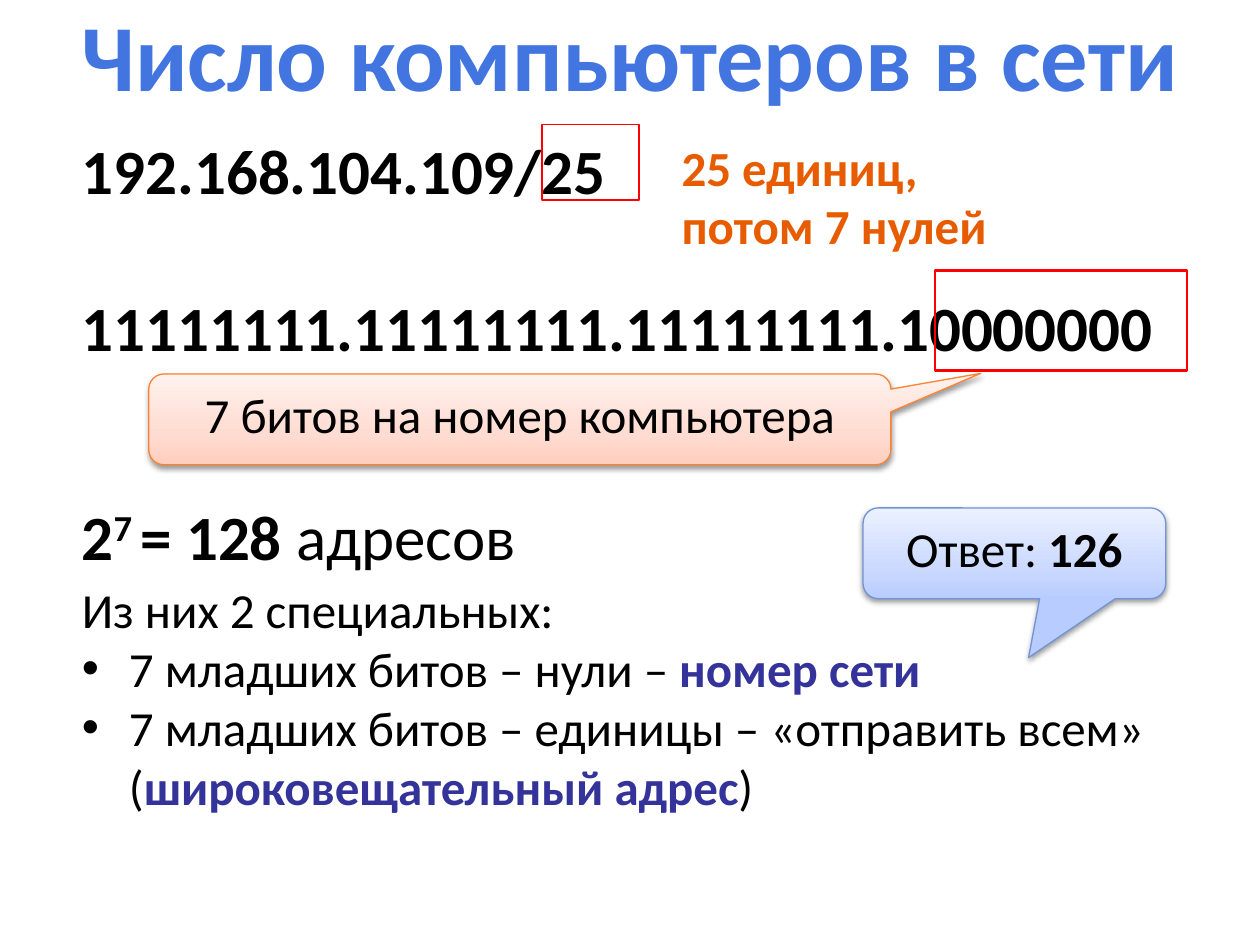
from lxml import etree
from pptx import Presentation
from pptx import util as u
from pptx.dml.color import RGBColor
from pptx.enum import shapes, text
from pptx.oxml import parse_xml
from pptx.oxml.ns import nsdecls, qn

AL = text.PP_ALIGN
ACCENT = "333399"


def rgb(value):
    return RGBColor.from_string(value)


def add_text(p, content, size=28, bold=False, color="000000", font="Calibri", base=0):
    """Add a formatted run for each line of content."""
    for i, line in enumerate(content.split("\n")):
        if i:
            p.add_line_break()
        r = p.add_run()
        r.text = line
        r.font.name, r.font.size, r.font.bold = font, u.Pt(size), bold
        r.font.color.rgb = rgb(color)
        if base:
            r.font._element.set("baseline", str(base * 1000))


class Builder:
    hang = u.Cm(0.95)
    red = "FF0000"

    def __init__(self, prs):
        self.s = prs.slides.add_slide(prs.slide_layouts[6])

    def box(self, x, y, w, h, wrap=True, grow=False, anchor=text.MSO_ANCHOR.TOP):
        tf = self.s.shapes.add_textbox(u.Cm(x), u.Cm(y), u.Cm(w), u.Cm(h)).text_frame
        tf.word_wrap = wrap
        tf.vertical_anchor = anchor
        if grow:
            tf.auto_size = text.MSO_AUTO_SIZE.SHAPE_TO_FIT_TEXT
        return tf

    def para(self, tf, runs, align=AL.LEFT, spacing=None, hang=False, bullet=None):
        """Fill the first empty paragraph or add one; runs are (text, format) pairs."""
        p = tf.paragraphs[0] if not tf.paragraphs[0].runs else tf.add_paragraph()
        p.alignment = align
        if spacing:
            p.line_spacing = spacing
        pPr = p._p.get_or_add_pPr()
        if hang:
            pPr.set("marL", str(self.hang))
            pPr.set("indent", str(-self.hang))
        if bullet:
            etree.SubElement(pPr, qn("a:buFont")).set("typeface", "Arial")
            etree.SubElement(pPr, qn("a:buChar")).set("char", bullet)
        for content, fmt in runs:
            add_text(p, content, **fmt)

    def line_box(self, x, y, w, h, runs, wrap=False):
        tf = self.box(x, y, w, h, wrap, grow=True)
        self.para(tf, runs, AL.JUSTIFY, spacing=1.15, hang=True)

    def frame(self, x, y, w, h, width):
        sp = self.s.shapes.add_shape(shapes.MSO_SHAPE.RECTANGLE,
                                     u.Cm(x), u.Cm(y), u.Cm(w), u.Cm(h))
        sp.shadow.inherit = False
        sp.fill.background()
        sp.line.color.rgb, sp.line.width = rgb(self.red), u.Pt(width)

    def callout(self, x, y, w, h, tip, stops, line, runs):
        sp = self.s.shapes.add_shape(shapes.MSO_SHAPE.ROUNDED_RECTANGULAR_CALLOUT,
                                     u.Cm(x), u.Cm(y), u.Cm(w), u.Cm(h))
        for i, value in enumerate((*tip, 0.167)):
            sp.adjustments[i] = value
        # Three-stop gradient, darkest at the bottom
        sp.fill.gradient()
        sp.fill.gradient_angle = 90
        gs_list = sp._element.spPr.find(".//" + qn("a:gsLst"))
        for gs in list(gs_list):
            gs_list.remove(gs)
        for pos, color in zip((0, 35, 100), stops):
            gs = etree.SubElement(gs_list, qn("a:gs"), pos=str(pos * 1000))
            etree.SubElement(gs, qn("a:srgbClr"), val=color)
        sp.line.color.rgb, sp.line.width = rgb(line), u.Pt(0.75)
        # Soft shadow below
        sp._element.spPr.append(parse_xml(
            f'<a:effectLst {nsdecls("a")}><a:outerShdw blurRad="{u.Pt(3.1)}" '
            f'dist="{u.Pt(1.6)}" dir="5400000" rotWithShape="0"><a:srgbClr val="000000">'
            '<a:alpha val="38000"/></a:srgbClr></a:outerShdw></a:effectLst>'))
        sp.text_frame.vertical_anchor = text.MSO_ANCHOR.TOP
        self.para(sp.text_frame, runs, AL.CENTER)


def main():
    prs = Presentation()
    prs.slide_width, prs.slide_height = u.Cm(25.4), u.Cm(19.05)
    b = Builder(prs)
    big = dict(size=36, bold=True)
    term = dict(bold=True, color=ACCENT)
    left = 1.4

    # Title
    tf = b.box(0, 0, 25.4, 2.16, anchor=text.MSO_ANCHOR.MIDDLE)
    b.para(tf, [("Число компьютеров в сети", dict(size=54, bold=True, color="4275DF"))],
           AL.CENTER)

    # Address and mask
    b.line_box(left, 2.29, 11.91, 2.03, [("192.168.104.109/25", big)])
    tf = b.box(13.49, 2.64, 7.34, 2.87)
    b.para(tf, [("25 единиц, \nпотом 7 нулей", dict(bold=True, color="E75C01"))])
    b.line_box(left, 5.46, 22.89, 2.03, [("11111111.11111111.11111111.10000000", big)])
    b.frame(18.85, 5.46, 5.08, 2.01, 1.5)
    b.callout(3, 7.54, 14.96, 1.83, (0.621, -0.507), ("FFCEBF", "FFDCD2", "FFF2EE"),
              "FD8231", [("7 битов на номер компьютера", {})])

    # Number of addresses
    b.line_box(left, 9.68, 22.63, 2.03,
               [("2", big), ("7 ", dict(big, base=30)), ("= 128", big),
                (" адресов", dict(size=36))], wrap=True)

    # Special addresses
    tf = b.box(left, 11.56, 23.24, 5.03, grow=True)
    b.para(tf, [("Из них 2 специальных:", {})], AL.JUSTIFY, hang=True)
    b.para(tf, [("7 младших битов – нули – ", {}), ("номер сети ", term)],
           AL.JUSTIFY, hang=True, bullet="•")
    b.para(tf, [("7 младших битов – единицы – «отправить всем» (", {}),
                ("широковещательный адрес", term), (")", {})], hang=True, bullet="•")

    # Prefix frame and answer
    b.frame(10.92, 2.51, 1.96, 1.52, 1)
    b.callout(17.4, 10.24, 6.1, 1.83, (0.047, 1.149), ("B8CCFF", "CCDAFF", "EBF1FF"),
              "7094D7", [("Ответ: ", {}), ("126", dict(bold=True))])

    prs.save("out.pptx")


if __name__ == "__main__":
    main()
